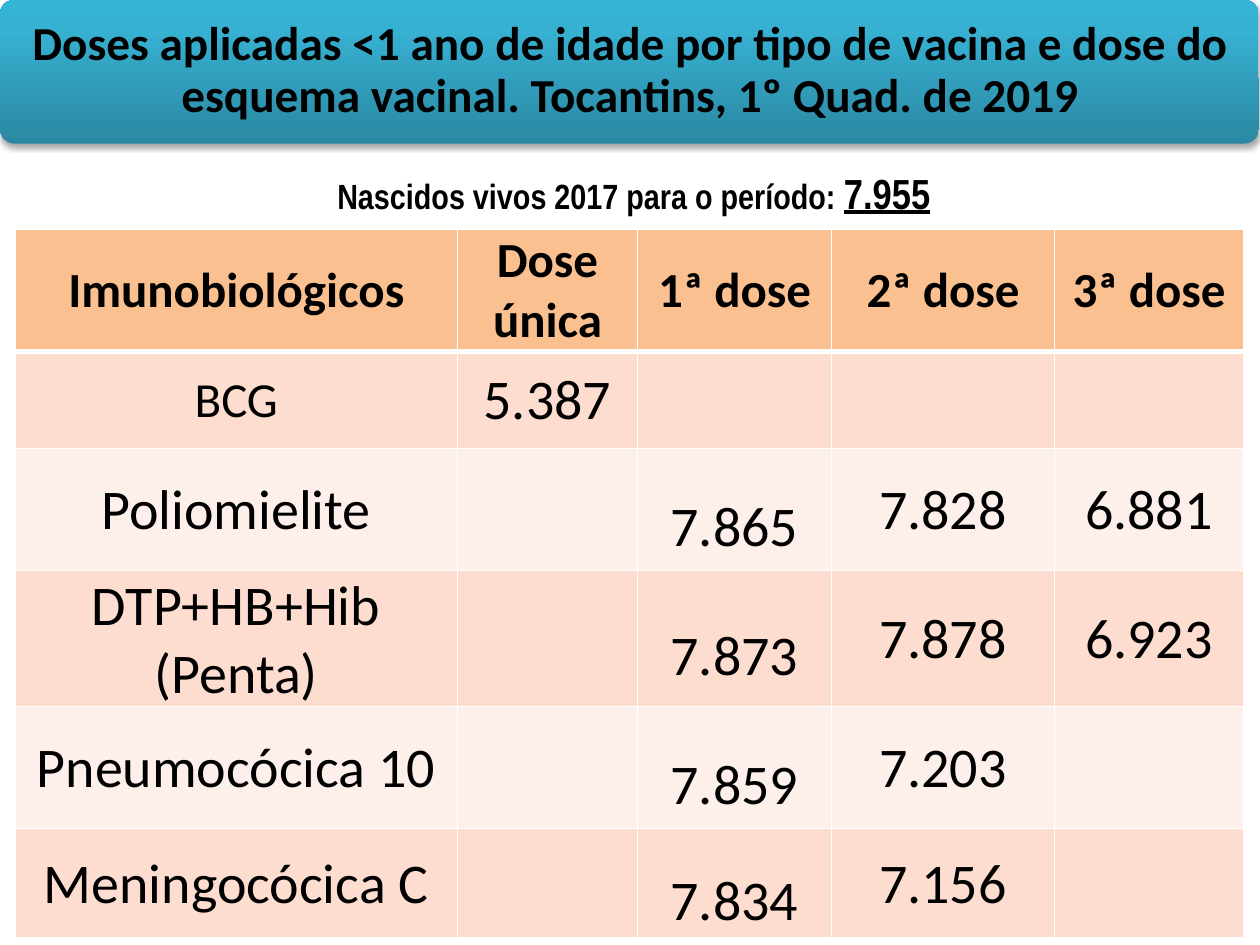
from lxml import etree
from pptx import Presentation, util as u
from pptx.dml.color import RGBColor
from pptx.enum import shapes, text
from pptx.oxml import parse_xml
from pptx.oxml.ns import nsdecls, qn

BLACK, WHITE = "000000", "FFFFFF"
HEAD, BANDS = "FAC090", ("FCDDCF", "FDEFE9")
COLS = (3.51, 1.43, 1.54, 1.77, 1.5)
ROWS = (0.97, 0.77, 0.97, 0.97, 0.97, 0.87)
DATA = (
    ("Imunobiológicos", "Dose única", "1ª dose", "2ª dose", "3ª dose"),
    ("BCG", "5.387", "", "", ""),
    ("Poliomielite", "", "7.865", "7.828", "6.881"),
    ("DTP+HB+Hib (Penta)", "", "7.873", "7.878", "6.923"),
    ("Pneumocócica 10", "", "7.859", "7.203", ""),
    ("Meningocócica C", "", "7.834", "7.156", ""),
)


def color(code):
    return RGBColor.from_string(code)


def place(shape, left, top, width, height):
    shape.left, shape.top = u.Inches(left), u.Inches(top)
    shape.width, shape.height = u.Inches(width), u.Inches(height)


def write(par, words, size=32, font="Calibri", bold=False, under=None, line=None):
    """Add a formatted run to a centred paragraph."""
    par.alignment = text.PP_ALIGN.CENTER
    if line:
        par.line_spacing = line
    run = par.add_run()
    run.text = words
    face = run.font
    face.size, face.name = u.Pt(size), font
    face.bold, face.underline = bold, under
    face.color.rgb = color(BLACK)


def banner(slide):
    """Gradient bar with a soft shadow, and the title above it."""
    bar = slide.shapes.add_shape(
        shapes.MSO_SHAPE.ROUNDED_RECTANGLE, 0, 0, u.Inches(9.99), u.Inches(1.14))
    bar.adjustments[0] = 0.1
    bar.line.fill.background()
    props = bar._element.spPr
    stops = "".join(
        f'<a:gs pos="{pos * 1000}"><a:srgbClr val="{code}"/></a:gs>'
        for pos, code in ((0, "2A88A2"), (80, "37B1D2"), (100, "34B4D6")))
    props.find(qn("a:ln")).addprevious(parse_xml(
        f'<a:gradFill {nsdecls("a")} rotWithShape="1"><a:gsLst>{stops}</a:gsLst>'
        '<a:lin ang="16200000" scaled="0"/></a:gradFill>'))
    props.append(parse_xml(
        f'<a:effectLst {nsdecls("a")}><a:outerShdw blurRad="{u.Pt(3.1)}" '
        f'dist="{u.Pt(1.8)}" dir="5400000" rotWithShape="0"><a:srgbClr val="{BLACK}">'
        '<a:alpha val="35000"/></a:srgbClr></a:outerShdw></a:effectLst>'))

    title = slide.shapes.title
    place(title, 0.04, 0.03, 9.92, 1.07)
    frame = title.text_frame
    frame.auto_size = text.MSO_AUTO_SIZE.NONE
    frame.vertical_anchor = text.MSO_ANCHOR.MIDDLE
    frame.margin_left = frame.margin_right = u.Inches(0.11)
    frame.margin_top = frame.margin_bottom = u.Inches(0.11)
    write(frame.paragraphs[0],
          "Doses aplicadas <1 ano de idade por tipo de vacina e dose do "
          "esquema vacinal. Tocantins, 1º Quad. de 2019",
          size=27, bold=True, line=0.9)
    bar._element.addnext(title._element)  # bring the title in front


def births(slide):
    box = slide.shapes.add_textbox(
        u.Inches(0.03), u.Inches(1.28), u.Inches(10), u.Inches(0.5))
    box.text_frame.word_wrap = True
    par = box.text_frame.paragraphs[0]
    write(par, "Nascidos vivos 2017 para o período: ",
          size=20, font="Arial Narrow", bold=True)
    write(par, "7.955", size=24, font="Arial Narrow", bold=True, under=True)


def border(cell, **widths):
    """Draw white lines on the sides L, R, T and B."""
    props = cell._tc.get_or_add_tcPr()
    for side, width in widths.items():
        line = etree.SubElement(props, qn("a:ln" + side), w=str(u.Pt(width)))
        fill = etree.SubElement(line, qn("a:solidFill"))
        etree.SubElement(fill, qn("a:srgbClr"), val=WHITE)


def doses(slide):
    table = slide.shapes.add_table(
        len(ROWS), len(COLS), u.Inches(0.12), u.Inches(1.82),
        u.Inches(sum(COLS)), u.Inches(sum(ROWS))).table
    for col, width in zip(table.columns, COLS):
        col.width = u.Inches(width)
    for r, (high, words) in enumerate(zip(ROWS, DATA)):
        table.rows[r].height = u.Inches(high)
        for c, word in enumerate(words):
            cell = table.cell(r, c)
            border(cell, L=1, R=1, T=3 if r == 1 else 1, B=3 if r == 0 else 1)
            cell.fill.solid()
            cell.fill.fore_color.rgb = color(BANDS[(r - 1) % 2] if r else HEAD)
            cell.vertical_anchor = text.MSO_ANCHOR.MIDDLE
            cell.margin_left = cell.margin_right = u.Inches(0.01)
            cell.margin_top, cell.margin_bottom = u.Inches(0.01), 0
            if word:
                small = r == 0 or word == "BCG"
                write(cell.text_frame.paragraphs[0], word,
                      size=28 if small else 32, bold=r == 0,
                      line=1.5 if r and c == 2 else None)


def main():
    deck = Presentation()
    deck.slide_width, deck.slide_height = u.Inches(10), u.Inches(7.5)
    slide = deck.slides.add_slide(deck.slide_layouts[5])
    births(slide)
    doses(slide)
    banner(slide)
    deck.save("out.pptx")


if __name__ == "__main__":
    main()
